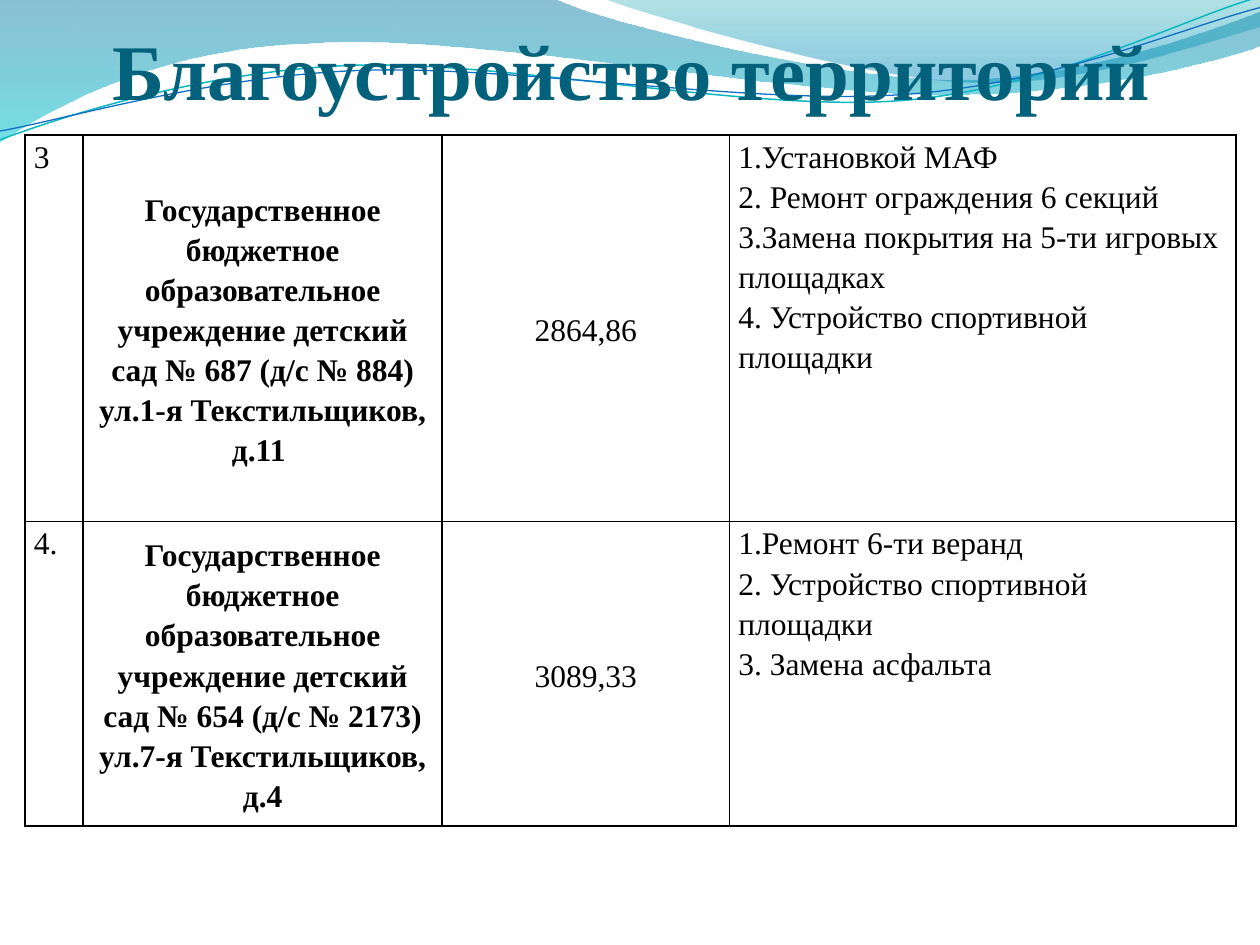
from math import cos, radians, sin

from lxml import etree
from pptx import Presentation
from pptx.dml.color import RGBColor
from pptx.enum.text import MSO_ANCHOR, PP_ALIGN
from pptx.oxml.ns import qn
from pptx.util import Inches, Pt

LEFT, CENTER, JUSTIFY = PP_ALIGN.LEFT, PP_ALIGN.CENTER, PP_ALIGN.JUSTIFY
TOP, MIDDLE, BOTTOM = MSO_ANCHOR.TOP, MSO_ANCHOR.MIDDLE, MSO_ANCHOR.BOTTOM

FONT = "Times New Roman"
COLORS = {
    "title": "04617B", "text": "000000", "border": "000000",
    "blue": "0074A1", "cyan": "00C6CF", "teal": "00A1A9", "sky": "008BBF",
    "teal_line": "0AB8BF", "blue_line": "0F6FC6",
}
TILT = -2.7

# Waves: box, then points in the header; 2 numbers = line, 6 = Bezier curve
BANDS = [
    ((-0.01, -0.01, 10.02, 1.14),
     [(0, 0), (4.4, -0.01), (4.76, 0.17, 6.64, 0.63, 7.58, 0.63),
      (8.53, 0.63, 9.58, 0.26, 10, 0.09), (10.01, 0.36),
      (9.83, 0.44, 8.7, 0.76, 7.46, 0.75), (6.22, 0.75, 3.82, 0.28, 2.57, 0.34),
      (1.29, 0.36, 0.46, 0.83, -0.01, 1.13), (0, 0)],
     [(0, "blue", 45), (1, "cyan", 55)]),
    ((4.79, -0.01, 5.21, 0.7),
     [(4.79, -0.01), (5.09, 0.11, 6.82, 0.62, 7.69, 0.65),
      (8.56, 0.69, 9.61, 0.32, 10, 0.21), (10, 0), (4.79, -0.01)],
     [(0, "teal", 30), (0.8, "sky", 45)]),
]
STROKES = [
    ((-0.02, 0.22, 10.02, 0.71),
     [(0, 1.11), (0.48, 0.93, 1.58, 0.57, 2.77, 0.52),
      (3.95, 0.47, 5.93, 0.89, 7.13, 0.8), (8.33, 0.71, 9.38, 0.15, 9.98, -0.02)],
     "teal_line", 0.85),
    ((-0.02, 0.3, 10.03, 0.58),
     [(0, 1.04), (0.47, 0.96, 1.64, 0.61, 2.83, 0.56),
      (4.03, 0.51, 5.97, 0.84, 7.17, 0.75), (8.36, 0.67, 9.41, 0.21, 10, 0.06)],
     "blue_line", 0.75),
]

SCHOOL = "Государственное бюджетное образовательное учреждение детский сад "
ROWS = [
    (["3"],
     [SCHOOL + "№ 687 (д/с № 884)", "ул.1-я Текстильщиков, д.11 "],
     ["2864,86"],
     ["1.Установкой МАФ", "2. Ремонт ограждения 6 секций",
      "3.Замена покрытия на 5-ти игровых площадках",
      "4. Устройство спортивной площадки"]),
    (["4."],
     [SCHOOL + "№ 654 (д/с № 2173)", "ул.7-я Текстильщиков, д.4"],
     ["3089,33"],
     ["1.Ремонт 6-ти веранд", "2. Устройство спортивной площадки",
      "3. Замена асфальта"]),
]
COLUMN_WIDTHS = [0.46, 2.85, 2.28, 4.02]
ROW_HEIGHTS = [3.07, 2.25]
# Alignment, anchor, bold for each column
COLUMN_STYLES = [(JUSTIFY, TOP, False), (CENTER, MIDDLE, True),
                 (CENTER, MIDDLE, False), (LEFT, TOP, False)]


def rgb(name):
    return RGBColor.from_string(COLORS[name])


def set_attrs(obj, values):
    for name, value in values.items():
        setattr(obj, name, value)


def set_margins(obj, left, top, right, bottom):
    set_attrs(obj, {"margin_left": Inches(left), "margin_top": Inches(top),
                    "margin_right": Inches(right), "margin_bottom": Inches(bottom)})


def write_text(tf, lines, align, size, color, bold, spacing=1.0):
    for i, line in enumerate(lines):
        p = tf.paragraphs[0] if i == 0 else tf.add_paragraph()
        set_attrs(p, {"alignment": align, "line_spacing": spacing,
                      "space_before": Pt(0), "space_after": Pt(0)})
        r = p.add_run()
        r.text = line
        set_attrs(r.font, {"name": FONT, "size": Pt(size), "bold": bold})
        r.font.color.rgb = rgb(color)


def add_outline(s, box, segments, tilt=0):
    """Draw lines and curves inside box, which is turned by tilt degrees."""
    left, top, width, height = box
    half_w, half_h = width / 2, height / 2
    cos_t, sin_t = cos(radians(-tilt)), sin(radians(-tilt))

    def local(x, y):
        dx, dy = x - left - half_w, y - top - half_h
        return (Inches(half_w + dx * cos_t - dy * sin_t),
                Inches(half_h + dx * sin_t + dy * cos_t))

    builder = s.shapes.build_freeform(*local(*segments[0][-2:]))
    builder.add_line_segments([local(*seg[-2:]) for seg in segments[1:]],
                              close=segments[0] == segments[-1])
    sp = builder.convert_to_shape()
    set_attrs(sp, {"left": Inches(left), "top": Inches(top), "width": Inches(width),
                   "height": Inches(height), "rotation": tilt % 360})
    sp.shadow.inherit = False

    # Give the steps their curves, measured from the corner of the box
    outline = next(sp.element.iter(qn("a:path")))
    outline.set("w", str(Inches(width)))
    outline.set("h", str(Inches(height)))
    for step, seg in zip(list(outline), segments):
        for pt in list(step):
            step.remove(pt)
        if len(seg) == 6:
            curve = etree.Element(qn("a:cubicBezTo"))
            outline.replace(step, curve)
            step = curve
        for x, y in zip(seg[::2], seg[1::2]):
            px, py = local(x, y)
            etree.SubElement(step, qn("a:pt"), x=str(px), y=str(py))
    return sp


def add_waves(s):
    # Translucent gradient bands
    for box, segments, stops in BANDS:
        sp = add_outline(s, box, segments)
        sp.line.fill.background()
        sp.fill.gradient()
        sp.fill.gradient_angle = 270
        for stop, (position, color, _) in zip(sp.fill.gradient_stops, stops):
            stop.position = position
            stop.color.rgb = rgb(color)
        for clr, (_, _, opacity) in zip(sp.element.spPr.iter(qn("a:srgbClr")), stops):
            etree.SubElement(clr, qn("a:alpha"), val=str(opacity * 1000))
    # Thin curves
    for box, segments, color, width in STROKES:
        sp = add_outline(s, box, segments, TILT)
        sp.fill.background()
        sp.line.color.rgb = rgb(color)
        sp.line.width = Pt(width)


def add_title(s, left, top, width, height):
    box = s.shapes.add_textbox(Inches(left), Inches(top), Inches(width), Inches(height))
    tf = box.text_frame
    set_attrs(tf, {"word_wrap": True, "vertical_anchor": BOTTOM})
    set_margins(tf, 0, 0.05, 0, 0)
    write_text(tf, ["Благоустройство территорий"], CENTER, 45, "title", True)


def add_borders(cell, width):
    tc_pr = cell._tc.get_or_add_tcPr()
    for i, side in enumerate(("a:lnL", "a:lnR", "a:lnT", "a:lnB")):
        ln = etree.Element(qn(side), w=str(Pt(width)))
        fill = etree.SubElement(ln, qn("a:solidFill"))
        etree.SubElement(fill, qn("a:srgbClr"), val=COLORS["border"])
        tc_pr.insert(i, ln)


def add_works_table(s, left, top, height):
    frame = s.shapes.add_table(len(ROWS), len(COLUMN_WIDTHS), Inches(left), Inches(top),
                               Inches(sum(COLUMN_WIDTHS)), Inches(height))
    table = frame.table
    set_attrs(table, {"first_row": False, "horz_banding": False})
    for column, width in zip(table.columns, COLUMN_WIDTHS):
        column.width = Inches(width)
    for row, row_height, texts in zip(table.rows, ROW_HEIGHTS, ROWS):
        row.height = Inches(row_height)
        for cell, lines, (align, anchor, bold) in zip(row.cells, texts, COLUMN_STYLES):
            cell.fill.background()
            add_borders(cell, 1)
            cell.vertical_anchor = anchor
            set_margins(cell, 0.07, 0, 0.07, 0)
            write_text(cell.text_frame, lines, align, 18, "text", bold, 1.15)
    frame.height = Inches(height)


def main():
    prs = Presentation()
    prs.slide_width, prs.slide_height = Inches(10), Inches(7.5)
    s = prs.slides.add_slide(prs.slide_layouts[6])
    add_waves(s)
    add_title(s, 0.51, 0.13, 9, 0.79)
    add_works_table(s, 0.2, 1.07, 5.49)
    prs.save("out.pptx")


if __name__ == "__main__":
    main()
